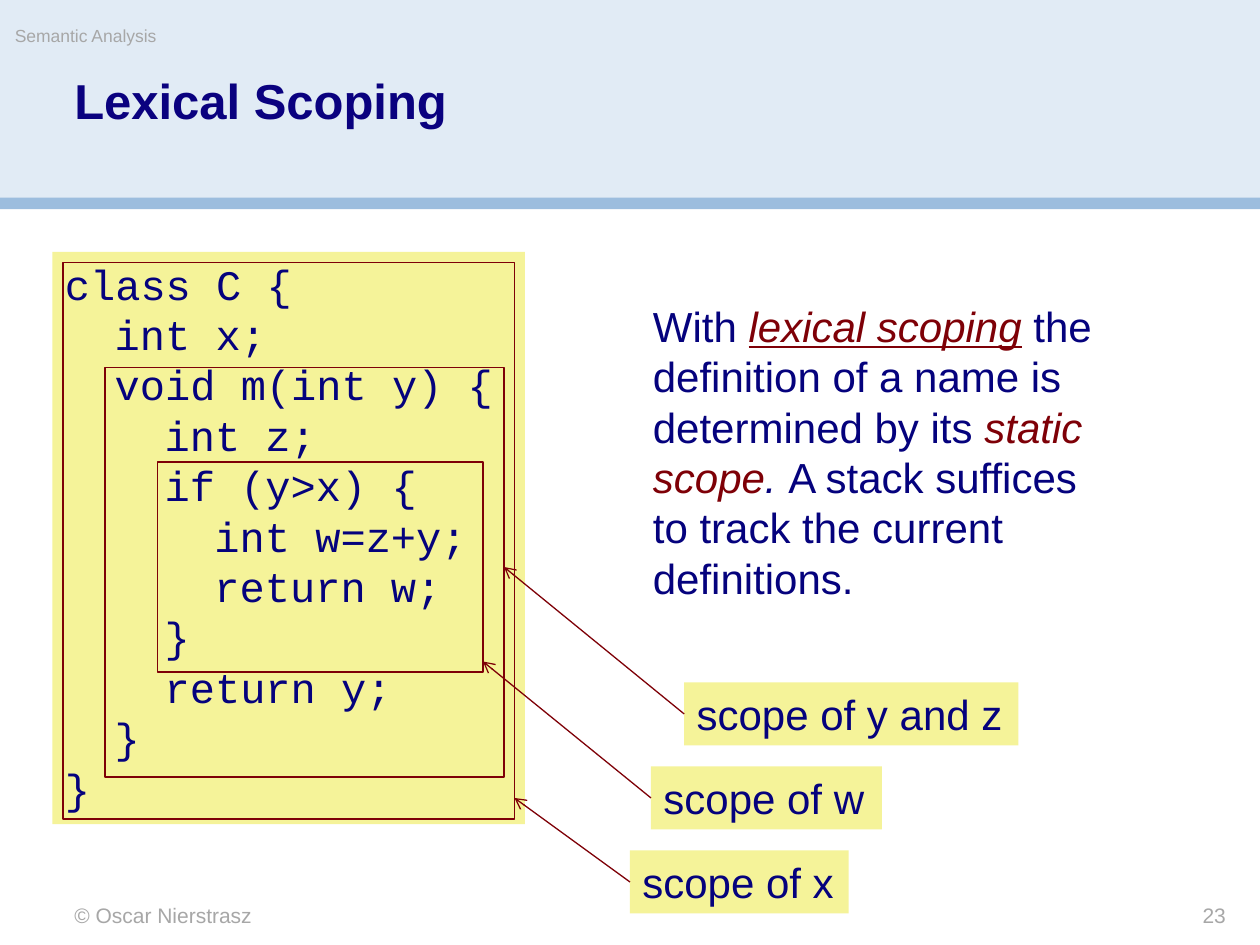
import pptx
import pptx.dml.color
import pptx.enum.shapes
import pptx.enum.text
import pptx.oxml
import pptx.oxml.ns
import pptx.util

Pt = pptx.util.Pt
RGBColor = pptx.dml.color.RGBColor
Align = pptx.enum.text.PP_ALIGN

PALE_BLUE = RGBColor(0xE1, 0xEB, 0xF5)
MID_BLUE = RGBColor(0x9C, 0xBD, 0xDE)
TITLE_BLUE = RGBColor(0x0A, 0x01, 0x7F)
NAVY = RGBColor(0x05, 0x02, 0x7D)
MAROON = RGBColor(0x7E, 0x00, 0x07)
YELLOW = RGBColor(0xF5, 0xF3, 0x99)
GREY = RGBColor(0xA7, 0xA7, 0xA7)

TITLE = {"name": "Arial", "size": Pt(28), "bold": True}
BODY = {"name": "Arial", "size": Pt(24)}
CODE = {"name": "Courier New", "size": Pt(24)}
FOOTER = {"name": "Arial", "size": Pt(12)}
HEADER = {"name": "Arial", "size": Pt(10)}
NO_INSETS = dict.fromkeys(("margin_left", "margin_top", "margin_right", "margin_bottom"), 0)
TOP_LEFT = {"alignment": Align.LEFT, "line_spacing": Pt(28.8)}
TAB_STEP = 28.5

CLASS_LINES = [
    "class C {", "\tint x;", "\tvoid m(int y) {", "\t\tint z;", "\t\tif (y>x) {",
    "\t\t\tint w=z+y;", "\t\t\treturn w;", "\t\t}", "\t\treturn y;", "\t}", "}",
]
DEFINITION = [
    ("With ", NAVY, {}),
    ("lexical scoping", MAROON, {"italic": True, "underline": True}),
    (" the definition of a name is determined by its ", NAVY, {}),
    ("static scope", MAROON, {"italic": True}),
    (". ", NAVY, {"italic": True}),
    ("A stack suffices to track the current definitions.", NAVY, {}),
]
SCOPE_OUTLINES = [(90, 264, 186, 120), (60, 210, 228, 234), (36, 150, 258, 318)]
SCOPE_LABELS = [
    ("scope of x", (360, 486, 125, 36), (294, 456)),
    ("scope of y and z", (391, 390, 191, 36), (288, 324)),
    ("scope of w", (372, 438, 132, 36), (276, 378)),
]


def set_values(target, values):
    """Set every attribute in values on target."""
    for key, value in values.items():
        setattr(target, key, value)


def points(lengths):
    """Turn numbers into point lengths."""
    return [Pt(length) for length in lengths]


def add_run(paragraph, text, color, font):
    """Append a formatted run to a paragraph."""
    run = paragraph.add_run()
    run.text = text
    set_values(run.font, font)
    run.font.color.rgb = color


def add_rectangle(slide, box, fill=None, line=None):
    """Add a rectangle with an optional fill and outline."""
    rectangle = slide.shapes.add_shape(pptx.enum.shapes.MSO_SHAPE.RECTANGLE, *points(box))
    rectangle.shadow.inherit = False
    if fill is None:
        rectangle.fill.background()
    else:
        rectangle.fill.solid()
        rectangle.fill.fore_color.rgb = fill
    if line is None:
        rectangle.line.fill.background()
    else:
        rectangle.line.color.rgb = line
        rectangle.line.width = Pt(0.75)
    return rectangle


def write(shape, paragraphs, font, frame_format, paragraph_format):
    """Fill a shape with paragraphs, each a list of text, colour and extra format."""
    frame = shape.text_frame
    set_values(frame, {"word_wrap": True, "vertical_anchor": pptx.enum.text.MSO_ANCHOR.TOP,
                       **frame_format})
    for index, runs in enumerate(paragraphs):
        paragraph = frame.paragraphs[0] if index == 0 else frame.add_paragraph()
        set_values(paragraph, paragraph_format)
        for text, color, extra in runs:
            add_run(paragraph, text, color, {**font, **extra})


def set_tab_stops(shape):
    """Give each paragraph three evenly spaced tab stops."""
    qn = pptx.oxml.ns.qn
    for paragraph in shape.text_frame.paragraphs:
        stops = pptx.oxml.parse_xml(f"<a:tabLst {pptx.oxml.ns.nsdecls('a')}/>")
        for level in range(1, 4):
            stop = stops.makeelement(qn("a:tab"), {"pos": str(Pt(TAB_STEP * level)), "algn": "l"})
            stops.append(stop)
        paragraph._p.get_or_add_pPr().append(stops)


def add_margin_text(slide, box, text, font, alignment=Align.LEFT, wrap=True):
    """Add a grey header or footer text."""
    margin_text = slide.shapes.add_textbox(*points(box))
    write(margin_text, [[(text, GREY, {})]], font,
          {**NO_INSETS, "word_wrap": wrap}, {"alignment": alignment})


def add_arrow(slide, start, end):
    """Add a thin line with an open arrowhead at its end."""
    arrow = slide.shapes.add_connector(
        pptx.enum.shapes.MSO_CONNECTOR.STRAIGHT, *points(start + end))
    arrow.line.color.rgb = MAROON
    arrow.line.width = Pt(0.75)
    namespace = pptx.oxml.ns.nsdecls("a")
    arrow.line._get_or_add_ln().append(
        pptx.oxml.parse_xml(f'<a:tailEnd {namespace} type="arrow"/>'))
    arrow.element.spPr.append(pptx.oxml.parse_xml(f"<a:effectLst {namespace}/>"))


def add_heading(slide):
    """Place the title over its two coloured bands."""
    title = slide.shapes.title
    for box, color in (((0, 0, 720, 114), PALE_BLUE), ((0, 113, 720, 6.5), MID_BLUE)):
        title.element.addprevious(add_rectangle(slide, box, color).element)
    set_values(title, dict(zip(("left", "top", "width", "height"),
                               points((42.5, 44, 636, 64)))))
    write(title, [[("Lexical Scoping", TITLE_BLUE, {})]], TITLE, NO_INSETS,
          {"alignment": Align.LEFT, "line_spacing": 0.9})


def add_code(slide):
    """Add the class listing on its yellow panel."""
    listing = add_rectangle(slide, (30, 144, 270, 327), YELLOW)
    write(listing, [[(line, NAVY, {})] for line in CLASS_LINES], CODE, {}, TOP_LEFT)
    set_tab_stops(listing)


def main():
    """Build and save the slide."""
    deck = pptx.Presentation()
    deck.slide_width, deck.slide_height = Pt(720), Pt(540)
    slide = deck.slides.add_slide(deck.slide_layouts[5])
    add_heading(slide)
    add_margin_text(slide, (42.5, 515.5, 300, 14.5), "© Oscar Nierstrasz", FOOTER)
    add_margin_text(slide, (8.5, 14.5, 425, 20), "Semantic Analysis", HEADER, wrap=False)
    add_margin_text(slide, (594, 516, 106.5, 14.5), "23", FOOTER, Align.RIGHT)
    add_code(slide)
    definition = slide.shapes.add_textbox(*points((366, 168, 276, 181.5)))
    write(definition, [DEFINITION], BODY, {}, TOP_LEFT)
    for outline in SCOPE_OUTLINES:
        add_rectangle(slide, outline, line=MAROON)
    for text, box, _ in SCOPE_LABELS:
        label = add_rectangle(slide, box, YELLOW)
        write(label, [[(text, NAVY, {})]], BODY, {"word_wrap": False}, TOP_LEFT)
    for _, (left, top, _, height), target in SCOPE_LABELS:
        add_arrow(slide, (left, top + height / 2), target)
    deck.save("out.pptx")


if __name__ == "__main__":
    main()
